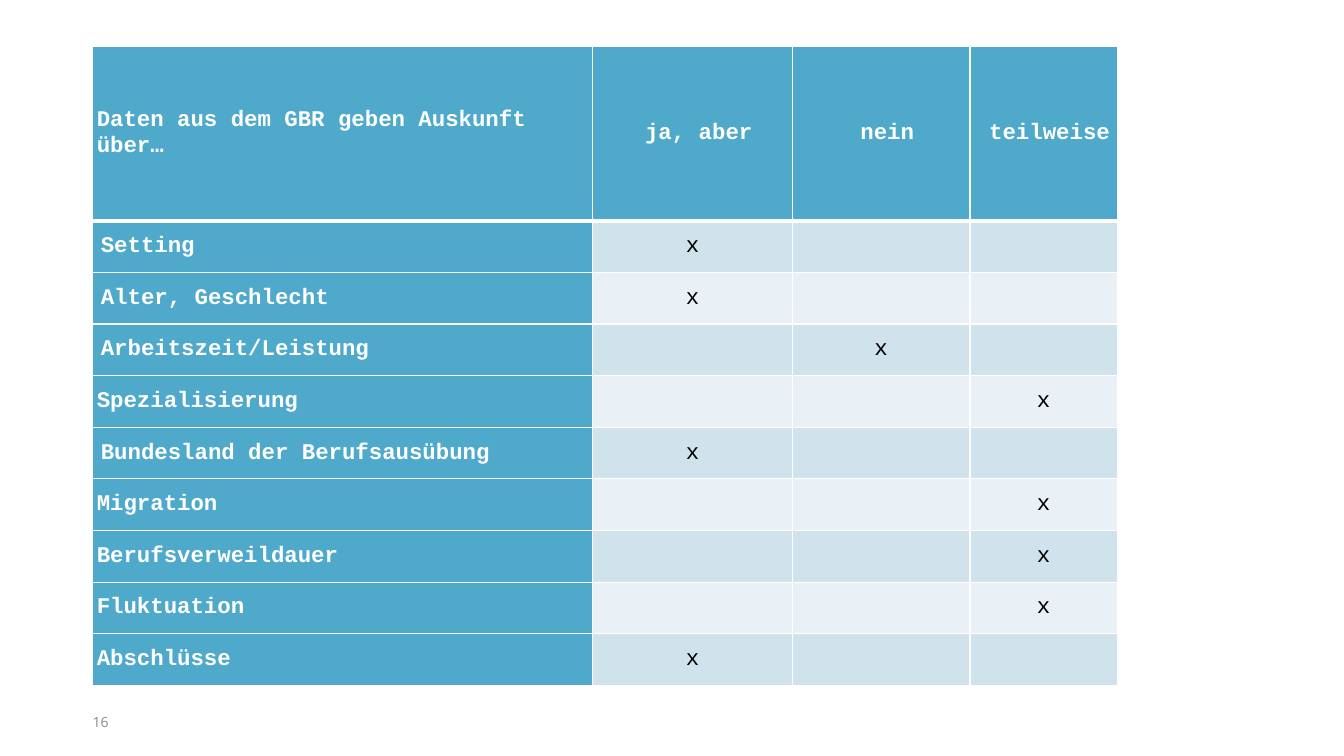
from lxml.etree import SubElement
from pptx import Presentation
from pptx.dml.color import RGBColor
from pptx.enum.text import MSO_ANCHOR, PP_ALIGN
from pptx.oxml.ns import qn
from pptx.util import Inches, Pt

WHITE = RGBColor(0xFF, 0xFF, 0xFF)
BLACK = RGBColor(0, 0, 0)
GREY = RGBColor(0x8C, 0x8C, 0x8C)
BLUE = RGBColor(0x4E, 0xA9, 0xCB)
BANDS = [RGBColor(0xD0, 0xE2, 0xEC), RGBColor(0xE9, 0xF1, 0xF6)]

HEADS = ["Daten aus dem GBR geben Auskunft über…", "ja, aber", "nein", "teilweise"]
TOPICS = [
    ("Setting", 1, 0.04, 0),
    ("Alter, Geschlecht", 1, 0.04, 0),
    ("Arbeitszeit/Leistung", 2, 0.04, 0),
    ("Spezialisierung", 3, 0.2, -0.2),
    ("Bundesland der Berufsausübung", 1, 0.04, 0),
    ("Migration", 3, 0, 0),
    ("Berufsverweildauer", 3, 0, 0),
    ("Fluktuation", 3, 0, 0),
    ("Abschlüsse", 1, 0, 0),
]
COLS = [4.96, 1.98, 1.76, 1.46]
HEAD = 1.73


def write(frame, text, size=16, face="Courier New", color=WHITE, bold=False,
          align=PP_ALIGN.LEFT, left=0, hang=0, after=0, line=1.0):
    para = frame.paragraphs[0]
    props = para._p.get_or_add_pPr()
    props.set("marL", str(Inches(left)))
    props.set("indent", str(Inches(hang)))
    para.alignment = align
    para.space_after = Pt(after)
    para.line_spacing = line
    run = para.add_run()
    run.text = text
    font = run.font
    font.size, font.name, font.bold = Pt(size), face, bold
    font.color.rgb = color


def style(cell, fill, top=1, base=1):
    cell.margin_left = cell.margin_right = Inches(0.04)
    cell.margin_top = cell.margin_bottom = 0
    cell.vertical_anchor = MSO_ANCHOR.MIDDLE
    props = cell._tc.get_or_add_tcPr()
    for side, width in zip("LRTB", (1, 1, top, base)):
        edge = SubElement(props, qn("a:ln" + side), w=str(Pt(width)))
        solid = SubElement(edge, qn("a:solidFill"))
        SubElement(solid, qn("a:srgbClr"), val=str(WHITE))
    cell.fill.solid()
    cell.fill.fore_color.rgb = fill


def matrix(slide, left, top, width, height):
    box = [Inches(n) for n in (left, top, width, height)]
    table = slide.shapes.add_table(len(TOPICS) + 1, len(COLS), *box).table
    for col, share in zip(table.columns, COLS):
        col.width = Inches(width * share / sum(COLS))
    for row in table.rows:
        row.height = Inches((height - HEAD) / len(TOPICS))
    table.rows[0].height = Inches(HEAD)

    for num, text in enumerate(HEADS):
        cell = table.cell(0, num)
        style(cell, BLUE, base=3)
        write(cell.text_frame, text, bold=True, after=6,
              align=PP_ALIGN.CENTER if num else PP_ALIGN.LEFT,
              left=0.12 if num else 0)

    for row, (topic, mark, inset, hang) in enumerate(TOPICS, 1):
        for num in range(len(COLS)):
            cell = table.cell(row, num)
            style(cell, BANDS[(row - 1) % 2] if num else BLUE,
                  top=3 if row == 1 else 1)
            if num == 0:
                write(cell.text_frame, topic, bold=True, after=6,
                      left=inset, hang=hang)
            elif num == mark:
                write(cell.text_frame, "x", color=BLACK, after=6,
                      align=PP_ALIGN.CENTER)


def footer(slide, left, top, width, height):
    box = [Inches(n) for n in (left, top, width, height)]
    frame = slide.shapes.add_textbox(*box).text_frame
    frame.word_wrap = True
    frame.margin_left = frame.margin_right = 0
    frame.margin_top = frame.margin_bottom = 0
    frame.vertical_anchor = MSO_ANCHOR.MIDDLE
    write(frame, "16", size=10, face="Open Sans", color=GREY, line=1.1)


def main():
    deck = Presentation()
    deck.slide_width, deck.slide_height = Inches(13.33), Inches(7.5)
    slide = deck.slides.add_slide(deck.slide_layouts[6])
    footer(slide, 0.92, 6.95, 0.64, 0.4)
    matrix(slide, 0.92, 0.46, 10.16, 6.34)
    deck.save("out.pptx")


if __name__ == "__main__":
    main()
